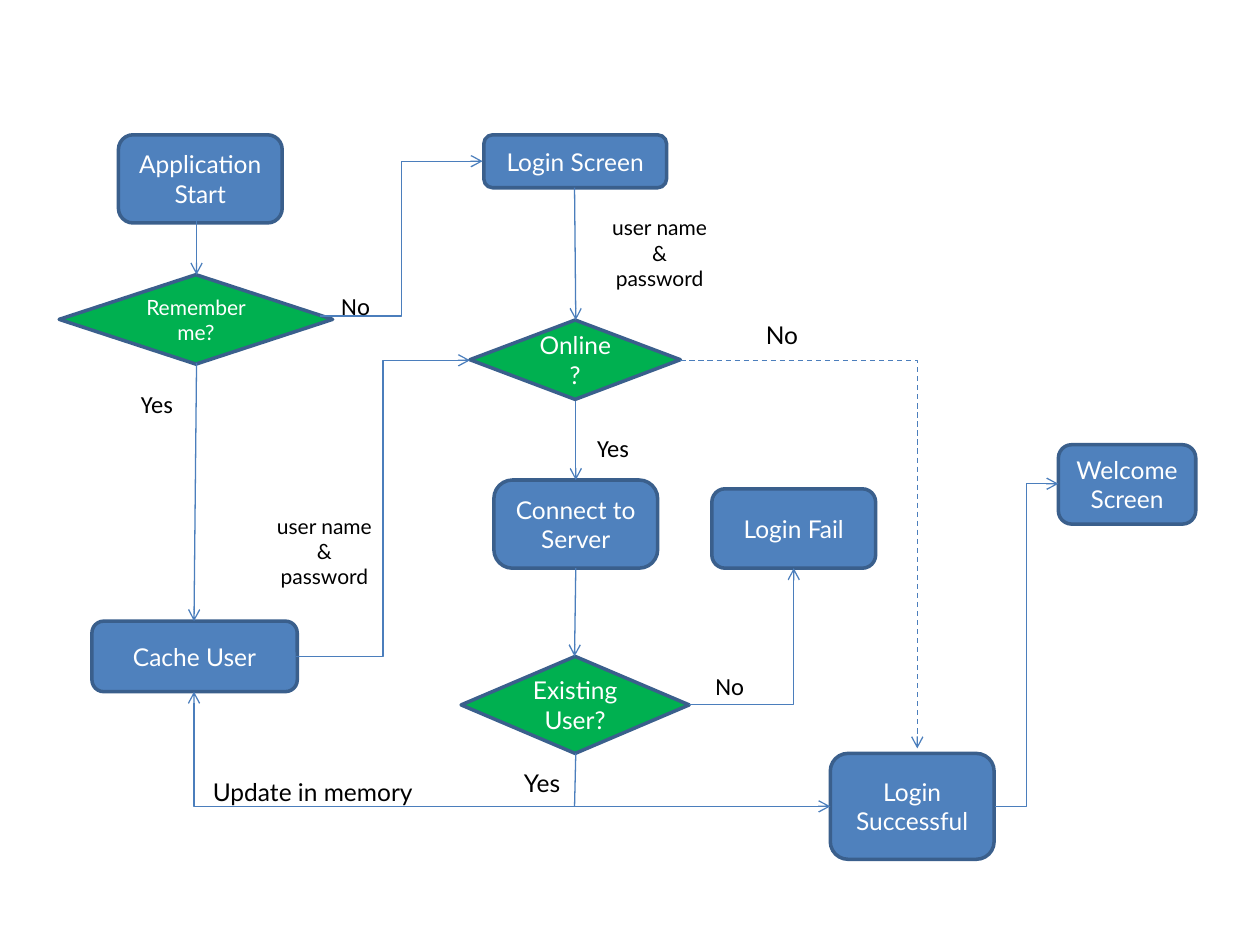
"""Build a one-slide flowchart of an application's login process."""
import pptx
import pptx.dml.color
import pptx.enum.dml
import pptx.enum.shapes
import pptx.enum.text
import pptx.oxml.ns
import pptx.oxml.xmlchemy
import pptx.util
from dataclasses import dataclass

Inches, Pt = pptx.util.Inches, pptx.util.Pt
RGB = pptx.dml.color.RGBColor.from_string
Shape = pptx.enum.shapes.MSO_SHAPE
Link = pptx.enum.shapes.MSO_CONNECTOR
Align = pptx.enum.text.PP_ALIGN
Anchor = pptx.enum.text.MSO_ANCHOR
qn = pptx.oxml.ns.qn


@dataclass(frozen=True)
class Theme:
    step: str = "4F81BD"
    decision: str = "00B050"
    outline: str = "3A5F8C"
    flow: str = "4B7EBC"
    on_fill: str = "FFFFFF"
    ink: str = "000000"
    font: str = "Lato"
    label_font: str = "Calibri"
    body: int = 14
    small: int = 12
    outline_width: float = 2
    flow_width: float = 0.75


theme = Theme()


def write(frame, lines, size, color, font=theme.font, align=Align.CENTER):
    frame.word_wrap = True
    for index, line in enumerate(lines):
        paragraph = frame.paragraphs[0] if index == 0 else frame.add_paragraph()
        paragraph.alignment = align
        run = paragraph.add_run()
        run.text = line
        run.font.size = Pt(size)
        run.font.name = font
        run.font.color.rgb = RGB(color)


deck = pptx.Presentation()
deck.slide_width, deck.slide_height = Inches(10), Inches(7.5)
slide = deck.slides.add_slide(deck.slide_layouts[6])

steps = [
    ("Application Start", 0.94, 1.07, 1.3, 0.7),
    ("Login Screen", 3.84, 1.07, 1.45, 0.42),
    ("Cache User", 0.73, 4.93, 1.63, 0.56),
    ("Connect to Server", 3.92, 3.81, 1.3, 0.7),
    ("Login Successful", 6.59, 5.98, 1.3, 0.84),
    ("Login Fail", 5.65, 3.88, 1.3, 0.63),
    ("Welcome Screen", 8.4, 3.53, 1.09, 0.63),
]
decisions = [
    ("Remember me?", 0.47, 2.18, 2.17, 0.71),
    ("Online?", 3.73, 2.54, 1.67, 0.63),
    ("Existing User?", 3.66, 5.21, 1.81, 0.77),
]
for kind, fill, nodes in (
    (Shape.ROUNDED_RECTANGLE, theme.step, steps),
    (Shape.FLOWCHART_DECISION, theme.decision, decisions),
):
    for caption, *place in nodes:
        node = slide.shapes.add_shape(kind, *map(Inches, place))
        node.shadow.inherit = False
        node.fill.solid()
        node.fill.fore_color.rgb = RGB(fill)
        node.line.color.rgb = RGB(theme.outline)
        node.line.width = Pt(theme.outline_width)
        node.text_frame.vertical_anchor = Anchor.MIDDLE
        size = theme.small if caption == "Remember me?" else theme.body
        write(node.text_frame, [caption], size, theme.on_fill)
        if caption == "Connect to Server":
            node.adjustments[0] = 0.21

straight, z_bend, corner = "line", "bentConnector3", "bentConnector2"
flows = [
    (straight, 1.56, 1.75, 1.56, 2.18, "tail"),
    (straight, 1.56, 2.88, 1.54, 4.93, "tail"),
    (straight, 4.56, 1.49, 4.57, 2.54, "tail"),
    (straight, 4.57, 3.18, 4.57, 3.81, "tail"),
    (straight, 4.57, 4.51, 4.56, 5.21, "tail"),
    (straight, 4.57, 5.98, 4.56, 6.4, ""),
    (z_bend, 2.54, 2.51, 3.83, 1.28, "tail"),
    (z_bend, 2.35, 5.21, 3.73, 2.86, "tail"),
    (z_bend, 7.9, 6.4, 8.4, 3.84, "tail"),
    (corner, 5.47, 5.59, 6.3, 4.51, "tail"),
    (corner, 5.4, 2.86, 7.28, 5.94, "tail dashed"),
    (corner, 6.59, 6.4, 1.54, 5.49, "head tail"),
]
for route, x1, y1, x2, y2, style in flows:
    link = Link.STRAIGHT if route == straight else Link.ELBOW
    flow = slide.shapes.add_connector(link, *map(Inches, (x1, y1, x2, y2)))
    flow.line.color.rgb = RGB(theme.flow)
    flow.line.width = Pt(theme.flow_width)
    if "dashed" in style:
        flow.line.dash_style = pptx.enum.dml.MSO_LINE.DASH
    properties = flow._element.spPr
    properties.find(qn("a:prstGeom")).set("prst", route)
    outline = properties.find(qn("a:ln"))
    for end in ("head", "tail"):
        if end in style:
            arrow = pptx.oxml.xmlchemy.OxmlElement(f"a:{end}End")
            arrow.set("type", "arrow")
            outline.append(arrow)
    properties.append(pptx.oxml.xmlchemy.OxmlElement("a:effectLst"))

answers = [
    ("No", 2.61, 2.26, 0.58, 0.3, theme.label_font),
    ("Yes", 1.02, 3.04, 0.72, 0.3, theme.label_font),
    ("Yes", 4.64, 3.39, 0.51, 0.3, theme.label_font),
    ("No", 5.58, 5.28, 0.43, 0.3, theme.label_font),
    ("No", 5.98, 2.49, 0.67, 0.34, theme.font),
    ("Update in memory", 1.59, 6.12, 1.88, 0.34, theme.font),
    ("Yes", 4.06, 6.05, 0.51, 0.34, theme.font),
]
for caption, *place, font in answers:
    answer = slide.shapes.add_textbox(*map(Inches, place))
    write(answer.text_frame, [caption], theme.body, theme.ink, font, Align.LEFT)

for left, top in ((4.69, 1.6), (2.03, 3.97)):
    credentials = slide.shapes.add_textbox(*map(Inches, (left, top, 1.09, 0.81)))
    frame = credentials.text_frame
    frame.vertical_anchor = Anchor.MIDDLE
    frame.margin_top = frame.margin_bottom = Inches(0.1)
    write(frame, ["user name", "&", "password"], theme.small, theme.ink)

deck.save("out.pptx")
